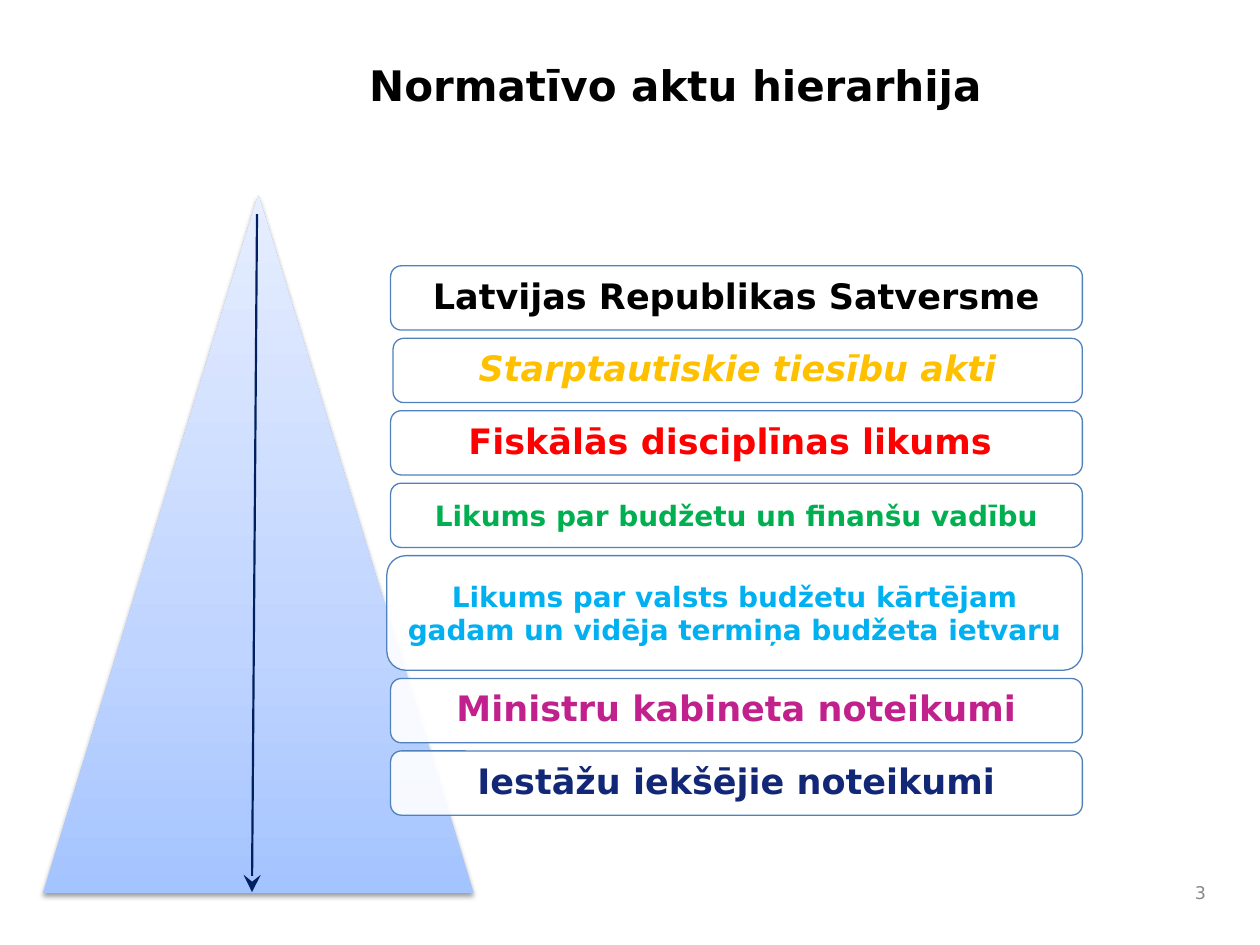
"""Build a slide showing the hierarchy of legal acts."""
from copy import deepcopy
from dataclasses import dataclass

from lxml.etree import SubElement
from pptx import Presentation
from pptx.dml.color import RGBColor
from pptx.enum.shapes import MSO_CONNECTOR, MSO_SHAPE
from pptx.enum.text import MSO_ANCHOR, PP_ALIGN
from pptx.oxml.ns import qn
from pptx.util import Inches, Pt

FONT = "DejaVu Sans"
BLACK = RGBColor(0x00, 0x00, 0x00)
WHITE = RGBColor(0xFF, 0xFF, 0xFF)
GRAY = RGBColor(0x89, 0x89, 0x89)
GOLD = RGBColor(0xFF, 0xC0, 0x00)
RED = RGBColor(0xFF, 0x00, 0x00)
GREEN = RGBColor(0x00, 0xB0, 0x50)
SKY = RGBColor(0x00, 0xB0, 0xF0)
MAGENTA = RGBColor(0xC1, 0x21, 0x8C)
INDIGO = RGBColor(0x13, 0x27, 0x77)
NAVY = RGBColor(0x00, 0x20, 0x60)
BORDER = RGBColor(0x4F, 0x81, 0xBD)
GRADIENT = (
    (0, RGBColor(0xA4, 0xC4, 0xFF)),
    (0.35, RGBColor(0xBF, 0xD4, 0xFF)),
    (1, RGBColor(0xE6, 0xEE, 0xFF)),
)
LEVELS_TOP, LEVELS_BOTTOM, LEVELS_RIGHT = 2.11, 6.47, 8.59


@dataclass(frozen=True)
class Level:
    """One level of the hierarchy."""
    text: str
    color: RGBColor
    size: int = 20
    italic: bool = False
    left: float = 3.1
    height: float = 0.51


LEVELS = (
    Level("Latvijas Republikas Satversme", BLACK),
    Level("Starptautiskie tiesību akti", GOLD, italic=True, left=3.12),
    Level("Fiskālās disciplīnas likums ", RED),
    Level("Likums par budžetu un finanšu vadību", GREEN, size=16),
    Level("Likums par valsts budžetu kārtējam gadam un vidēja termiņa budžeta ietvaru",
          SKY, size=16, left=3.07, height=0.91),
    Level("Ministru kabineta noteikumi", MAGENTA),
    Level("Iestāžu iekšējie noteikumi", INDIGO),
)


def write_text(shape, text: str, *, size: int, color: RGBColor, bold: bool = True,
               italic: bool = False, align=PP_ALIGN.CENTER, anchor=MSO_ANCHOR.MIDDLE,
               margin: float | None = None, line_spacing: float = 1.0) -> None:
    """Fill a shape with one formatted paragraph."""
    frame = shape.text_frame
    frame.word_wrap = True
    frame.vertical_anchor = anchor
    if margin is not None:
        frame.margin_left = frame.margin_right = Inches(margin)
        frame.margin_top = frame.margin_bottom = Inches(margin)
    paragraph = frame.paragraphs[0]
    paragraph.alignment = align
    paragraph.line_spacing = line_spacing
    run = paragraph.add_run()
    run.text = text
    run.font.name = FONT
    run.font.size = Pt(size)
    run.font.bold = bold
    run.font.italic = italic
    run.font.color.rgb = color


def add_title(slide) -> None:
    """Place the slide title."""
    title = slide.shapes.title
    title.left, title.top = Inches(2.83), Inches(0.42)
    title.width, title.height = Inches(6.67), Inches(1.13)
    write_text(title, "Normatīvo aktu hierarhija", size=24, color=BLACK,
               align=PP_ALIGN.LEFT, anchor=MSO_ANCHOR.TOP)


def add_pyramid(slide) -> None:
    """Draw the shaded triangle with its soft shadow."""
    pyramid = slide.shapes.add_shape(MSO_SHAPE.ISOSCELES_TRIANGLE, Inches(0.34),
                                     Inches(1.55), Inches(3.42), Inches(5.54))
    pyramid.fill.gradient()
    pyramid.fill.gradient_angle = 90
    properties = pyramid.element.spPr
    first_stop = properties.find(".//" + qn("a:gs"))
    first_stop.addnext(deepcopy(first_stop))
    for stop, (position, color) in zip(pyramid.fill.gradient_stops, GRADIENT):
        stop.position = position
        stop.color.rgb = color
    pyramid.line.fill.background()
    pyramid.shadow.inherit = False
    shadow = SubElement(properties.find(qn("a:effectLst")), qn("a:outerShdw"),
                        blurRad=str(Pt(3.1)), dist=str(Pt(1.6)), dir="5400000",
                        rotWithShape="0")
    shadow_color = SubElement(shadow, qn("a:srgbClr"), val=str(BLACK))
    SubElement(shadow_color, qn("a:alpha"), val="38000")


def add_level(slide, level: Level, top: float) -> None:
    """Draw one rounded box of the hierarchy."""
    box = slide.shapes.add_shape(MSO_SHAPE.ROUNDED_RECTANGLE, Inches(level.left), Inches(top),
                                 Inches(LEVELS_RIGHT - level.left), Inches(level.height))
    box.fill.solid()
    box.fill.fore_color.rgb = WHITE
    fill_color = box.element.spPr.find(qn("a:solidFill")).find(qn("a:srgbClr"))
    SubElement(fill_color, qn("a:alpha"), val="90000")
    box.line.color.rgb = BORDER
    box.line.width = Pt(0.75)
    box.shadow.inherit = False
    large = level.size == 20
    write_text(box, level.text, size=level.size, color=level.color, italic=level.italic,
               margin=0.08 if large else 0.07, line_spacing=0.9 if large else 1.0)


def add_arrow(slide) -> None:
    """Draw the arrow running down the pyramid."""
    arrow = slide.shapes.add_connector(MSO_CONNECTOR.STRAIGHT, Inches(2.04), Inches(1.7),
                                       Inches(2), Inches(7.08))
    arrow.line.color.rgb = NAVY
    arrow.line.width = Pt(1.25)
    properties = arrow.element.spPr
    SubElement(properties.find(qn("a:ln")), qn("a:tailEnd"), type="stealth", w="lg", len="lg")
    SubElement(properties, qn("a:effectLst"))


def main() -> None:
    """Assemble and save the presentation."""
    presentation = Presentation()
    presentation.slide_width, presentation.slide_height = Inches(10), Inches(7.5)
    slide = presentation.slides.add_slide(presentation.slide_layouts[5])
    add_title(slide)
    number = slide.shapes.add_textbox(Inches(9.21), Inches(6.92), Inches(0.46), Inches(0.33))
    write_text(number, "3", size=10, color=GRAY, bold=False, align=PP_ALIGN.RIGHT)
    add_pyramid(slide)
    free_height = LEVELS_BOTTOM - LEVELS_TOP - sum(level.height for level in LEVELS)
    gap = free_height / (len(LEVELS) - 1)
    top = LEVELS_TOP
    for level in LEVELS:
        add_level(slide, level, top)
        top += level.height + gap
    add_arrow(slide)
    presentation.save("out.pptx")


if __name__ == "__main__":
    main()
